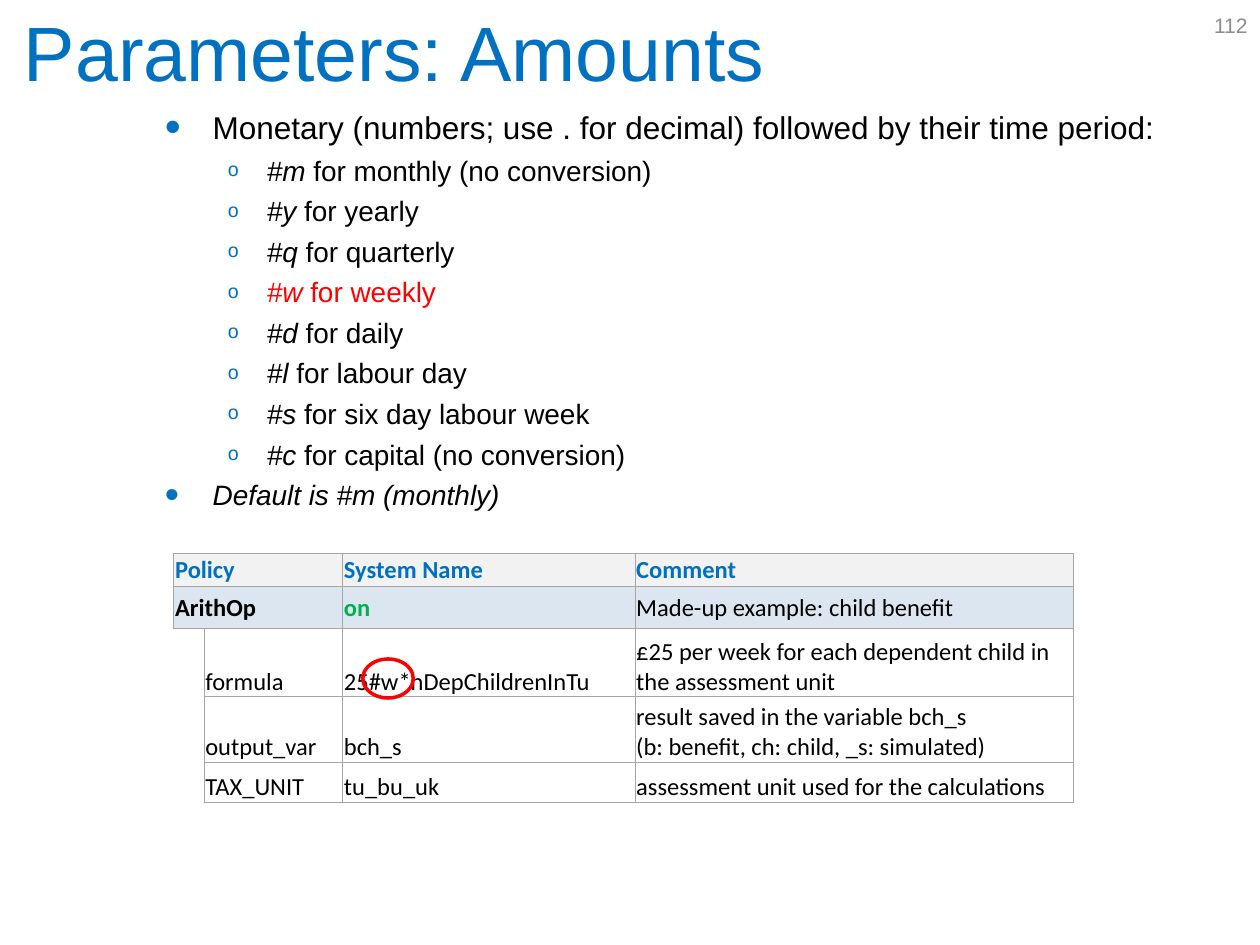
from lxml import etree
from pptx import Presentation
from pptx.dml.color import RGBColor
from pptx.enum.shapes import MSO_SHAPE
from pptx.enum.text import MSO_ANCHOR, MSO_AUTO_SIZE, PP_ALIGN
from pptx.oxml.ns import qn
from pptx.util import Inches, Pt

OVAL = MSO_SHAPE.OVAL
MIDDLE, BOTTOM = MSO_ANCHOR.MIDDLE, MSO_ANCHOR.BOTTOM
LEFT, RIGHT = PP_ALIGN.LEFT, PP_ALIGN.RIGHT
NO_AUTOFIT = MSO_AUTO_SIZE.NONE

COLORS = {
    "blue": "0070C0", "black": "000000", "red": "FF0000", "green": "00B050",
    "number": "8C8C8C", "border": "A6A6A6", "header": "F2F2F2",
    "policy": "DCE6F1", "white": "FFFFFF",
}
PERIODS = [
    ("#m", "monthly (no conversion)"), ("#y", "yearly"), ("#q", "quarterly"),
    ("#w", "weekly"), ("#d", "daily"), ("#l", "labour day"),
    ("#s", "six day labour week"), ("#c", "capital (no conversion)"),
]
HIGHLIGHTED = "#w"

# Bullet levels: character, size in percent, text indent, hanging indent
LEVELS = [("•", 145, 0.38, 0.38), ("o", 70, 0.81, 0.31)]

COLUMNS = [0.24, 1.1, 2.32, 3.48]
ROWS = [0.26, 0.34, 0.54, 0.52, 0.32]
HEADINGS = ["Policy", "System Name", "Comment"]
POLICY = ["ArithOp", "on", "Made-up example: child benefit"]
PARAMETERS = [
    ["formula", "25#w*nDepChildrenInTu",
     "£25 per week for each dependent child in the assessment unit"],
    ["output_var", "bch_s",
     "result saved in the variable bch_s\n(b: benefit, ch: child, _s: simulated)"],
    ["TAX_UNIT", "tu_bu_uk", "assessment unit used for the calculations"],
]


def rgb(name):
    return RGBColor.from_string(COLORS[name])


def box(left, top, width, height):
    return [Inches(length) for length in (left, top, width, height)]


def add_run(paragraph, text, size, color, font="Arial", bold=False, italic=False):
    run = paragraph.add_run()
    run.text = text
    run.font.name, run.font.size = font, Pt(size)
    run.font.bold, run.font.italic = bold, italic
    run.font.color.rgb = rgb(color)


def add_title(slide, text):
    title = slide.shapes.title
    title.left, title.top, title.width, title.height = box(0.09, -0.06, 9, 1.25)
    frame = title.text_frame
    frame.auto_size = NO_AUTOFIT
    frame.vertical_anchor = MIDDLE
    frame.margin_bottom = Inches(0.38)
    paragraph = frame.paragraphs[0]
    paragraph.alignment = LEFT
    add_run(paragraph, text, 44, "blue")


def add_text_frame(slide, *place):
    frame = slide.shapes.add_textbox(*box(*place)).text_frame
    frame.word_wrap = True
    return frame


def add_page_number(slide, number):
    frame = add_text_frame(slide, 7.67, 0, 2.33, 0.4)
    frame.vertical_anchor = MIDDLE
    paragraph = frame.paragraphs[0]
    paragraph.alignment = RIGHT
    add_run(paragraph, number, 12, "number")


def add_bullet(frame, level):
    """Return a bulleted paragraph, using the empty first one if it is free."""
    first = frame.paragraphs[0]
    is_first = not first.runs
    paragraph = first if is_first else frame.add_paragraph()
    paragraph.level = level
    char, percent, indent, hanging = LEVELS[level]
    properties = paragraph._p.get_or_add_pPr()
    properties.set("marL", str(Inches(indent)))
    properties.set("indent", str(-Inches(hanging)))
    color = etree.SubElement(properties, qn("a:buClr"))
    etree.SubElement(color, qn("a:srgbClr"), val=COLORS["blue"])
    etree.SubElement(properties, qn("a:buSzPct"), val=str(percent * 1000))
    etree.SubElement(properties, qn("a:buFont"), typeface="Arial")
    etree.SubElement(properties, qn("a:buChar"), char=char)
    if not is_first:
        paragraph.space_before = Pt(4)
    return paragraph


def add_periods(slide):
    frame = add_text_frame(slide, 1.21, 0.81, 8.27, 3.31)
    add_run(add_bullet(frame, 0),
            "Monetary (numbers; use . for decimal) followed by their time period:",
            18, "black")
    for suffix, period in PERIODS:
        color = "red" if suffix == HIGHLIGHTED else "black"
        paragraph = add_bullet(frame, 1)
        add_run(paragraph, suffix, 16, color, italic=True)
        add_run(paragraph, f" for {period}", 16, color)
    add_run(add_bullet(frame, 0), "Default is #m (monthly)", 16, "black", italic=True)


def set_borders(cell, sides):
    properties = cell._tc.get_or_add_tcPr()
    for position, side in enumerate("LRTB"):
        line = etree.Element(qn(f"a:ln{side}"), w=str(Pt(0.5)))
        if side in sides:
            fill = etree.SubElement(line, qn("a:solidFill"))
            etree.SubElement(fill, qn("a:srgbClr"), val=COLORS["border"])
        else:
            etree.SubElement(line, qn("a:noFill"))
        properties.insert(position, line)


def format_cell(cell, fill, anchor, sides="LRTB"):
    cell.margin_left = cell.margin_right = cell.margin_top = Inches(0.01)
    cell.margin_bottom = 0
    cell.vertical_anchor = anchor
    cell.fill.solid()
    cell.fill.fore_color.rgb = rgb(fill)
    set_borders(cell, sides)


def write_cell(cell, text, color="black", bold=False):
    paragraph = cell.text_frame.paragraphs[0]
    for index, line in enumerate(text.split("\n")):
        if index:
            paragraph.add_line_break()
        add_run(paragraph, line, 14, color, "Calibri", bold)


def add_policy_table(slide):
    table = slide.shapes.add_table(
        len(ROWS), len(COLUMNS), *box(1.38, 4.39, sum(COLUMNS), sum(ROWS))).table
    table.first_row = table.horz_banding = False
    for column, width in zip(table.columns, COLUMNS):
        column.width = Inches(width)
    for row, height in zip(table.rows, ROWS):
        row.height = Inches(height)

    # Heading and policy rows span the indent column
    styles = [
        (HEADINGS, "header", [("blue", True)] * 3),
        (POLICY, "policy", [("black", True), ("green", True), ("black", False)]),
    ]
    for row, (texts, fill, fonts) in enumerate(styles):
        for column in range(len(COLUMNS)):
            format_cell(table.cell(row, column), fill, MIDDLE)
        table.cell(row, 0).merge(table.cell(row, 1))
        for column, text, font in zip((0, 2, 3), texts, fonts):
            write_cell(table.cell(row, column), text, *font)

    # Parameter rows start after the indent column
    for row, texts in enumerate(PARAMETERS, start=len(styles)):
        indent_sides = "RT" if row == len(styles) else "R"
        format_cell(table.cell(row, 0), "white", BOTTOM, indent_sides)
        for column, text in enumerate(texts, start=1):
            format_cell(table.cell(row, column), "white", BOTTOM)
            write_cell(table.cell(row, column), text)


def add_period_marker(slide):
    marker = slide.shapes.add_shape(OVAL, *box(2.88, 5.23, 0.4, 0.31))
    marker.shadow.inherit = False
    marker.fill.background()
    marker.line.color.rgb = rgb("red")
    marker.line.width = Pt(2)


def main():
    deck = Presentation()
    deck.slide_width, deck.slide_height = Inches(10), Inches(7.5)
    slide = deck.slides.add_slide(deck.slide_layouts.get_by_name("Title Only"))
    add_policy_table(slide)
    add_page_number(slide, "112")
    add_title(slide, "Parameters: Amounts")
    add_periods(slide)
    add_period_marker(slide)
    deck.save("out.pptx")


if __name__ == "__main__":
    main()
